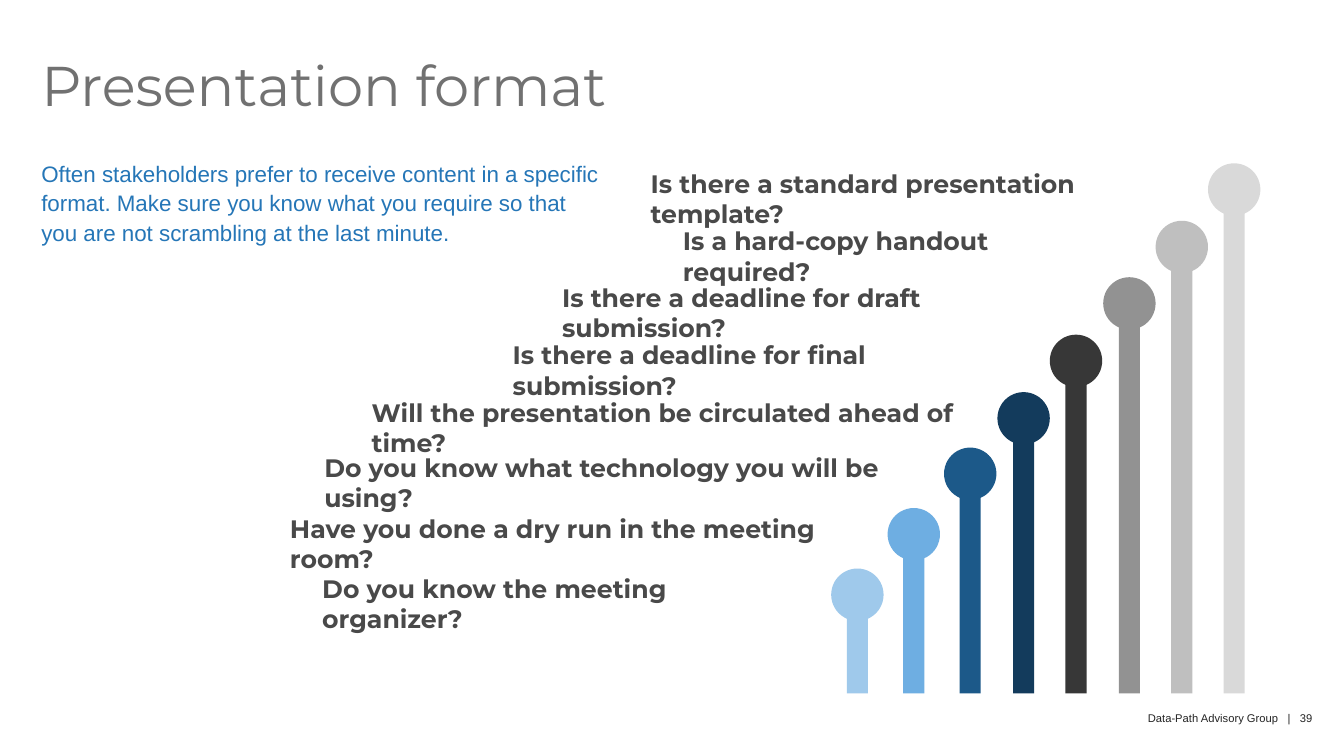
from lxml import etree
from pptx import Presentation
from pptx.dml.color import RGBColor
from pptx.enum.shapes import MSO_SHAPE
from pptx.enum.text import MSO_ANCHOR, MSO_AUTO_SIZE, PP_ALIGN
from pptx.oxml.ns import qn
from pptx.util import Inches, Pt

DISC, BAR = MSO_SHAPE.OVAL, MSO_SHAPE.RECTANGLE
TOP = MSO_ANCHOR.TOP
FIXED = MSO_AUTO_SIZE.NONE
LEFT, RIGHT = PP_ALIGN.LEFT, PP_ALIGN.RIGHT

DISC_SIZE = 0.52
BAR_WIDTH = 0.21
BASELINE = 6.88

# question, question left, question width, disc left, disc top, colour
PINS = [
    ("Is there a standard presentation template?", 6.36, 5.47, 11.99, 1.62, "D9D9D9"),
    ("Is a hard-copy handout required?", 6.68, 4.31, 11.47, 2.19, "BFBFBF"),
    ("Is there a deadline for draft submission?", 5.48, 5.12, 10.95, 2.75, "929292"),
    ("Is there a deadline for final submission?", 4.99, 5.05, 10.42, 3.32, "373737"),
    ("Will the presentation be circulated ahead of time?", 3.59, 6.37, 9.9, 3.89, "133B5C"),
    ("Do you know what technology you will be using?", 3.12, 6.21, 9.37, 4.44, "1C5989"),
    ("Have you done a dry run in the meeting room?", 2.78, 5.97, 8.81, 5.04, "6EAEE2"),
    ("Do you know the meeting organizer?", 3.1, 4.79, 8.25, 5.64, "9FC9EB"),
]


def rgb(hex_colour):
    return RGBColor.from_string(hex_colour)


def place(part, box):
    part.left, part.top, part.width, part.height = [Inches(v) for v in box]


def write(part, text, font_name, size, colour, bold=False, align=LEFT,
          line_spacing=1.0, margins=(0, 0, 0, 0)):
    """Fill a text-bearing shape with one formatted paragraph."""
    frame = part.text_frame
    frame.text = text
    frame.word_wrap = True
    frame.auto_size = FIXED
    frame.vertical_anchor = TOP
    (frame.margin_left, frame.margin_top,
     frame.margin_right, frame.margin_bottom) = [Inches(m) for m in margins]
    paragraph = frame.paragraphs[0]
    paragraph.alignment = align
    paragraph.line_spacing = line_spacing
    paragraph.space_before = Pt(0)
    font = paragraph.runs[0].font
    font.name, font.size, font.bold = font_name, Pt(size), bold
    font.color.rgb = rgb(colour)


def add_heading(slide, box):
    place(slide.shapes.title, box)
    write(slide.shapes.title, "Presentation format", "Montserrat", 40, "717171",
          line_spacing=0.9)


def add_intro(slide, box):
    intro = slide.placeholders[1]
    place(intro, box)
    write(intro,
          "Often stakeholders prefer to receive content in a specific format. "
          "Make sure you know what you require so that you are not scrambling "
          "at the last minute.",
          "Arial", 16, "2576B7", line_spacing=1.1)
    properties = intro.text_frame.paragraphs[0]._p.get_or_add_pPr()
    properties.set("marL", "0")
    properties.set("indent", "0")
    etree.SubElement(properties, qn("a:buNone"))


def add_text(slide, box, text, *style, **options):
    label = slide.shapes.add_textbox(*[Inches(v) for v in box])
    write(label, text, *style, **options)


def add_solid(slide, kind, box, colour):
    solid = slide.shapes.add_shape(kind, *[Inches(v) for v in box])
    solid.shadow.inherit = False
    solid.fill.solid()
    solid.fill.fore_color.rgb = rgb(colour)
    solid.line.fill.background()


def add_pin(slide, left, top, colour):
    """Draw a disc on a bar that runs from the disc's centre to the baseline."""
    bar_left = left + (DISC_SIZE - BAR_WIDTH) / 2
    bar_top = top + DISC_SIZE / 2
    add_solid(slide, DISC, (left, top, DISC_SIZE, DISC_SIZE), colour)
    add_solid(slide, BAR, (bar_left, bar_top, BAR_WIDTH, BASELINE - bar_top), colour)


def add_pins(slide):
    for question, text_left, text_width, disc_left, disc_top, colour in PINS:
        add_pin(slide, disc_left, disc_top, colour)
        add_text(slide, (text_left, disc_top, text_width, 0.4), question,
                 "Montserrat", 18, "494949", bold=True,
                 margins=(0.1, 0.05, 0.1, 0.05))


def add_footer(slide, box):
    add_text(slide, box, "Data-Path Advisory Group\u00a0\u00a0 |\u00a0\u00a0 39".replace("\u00a0", " "),
             "Arial", 8, "242424", align=RIGHT)


def main():
    prs = Presentation()
    prs.slide_width, prs.slide_height = Inches(13.34), Inches(7.5)
    slide = prs.slides.add_slide(prs.slide_layouts[1])
    add_footer(slide, (9.63, 7.06, 3.4, 0.13))
    add_intro(slide, (0.41, 1.56, 5.61, 0.92))
    add_heading(slide, (0.41, 0.58, 8.6, 0.9))
    add_pins(slide)
    prs.save("out.pptx")


if __name__ == "__main__":
    main()
